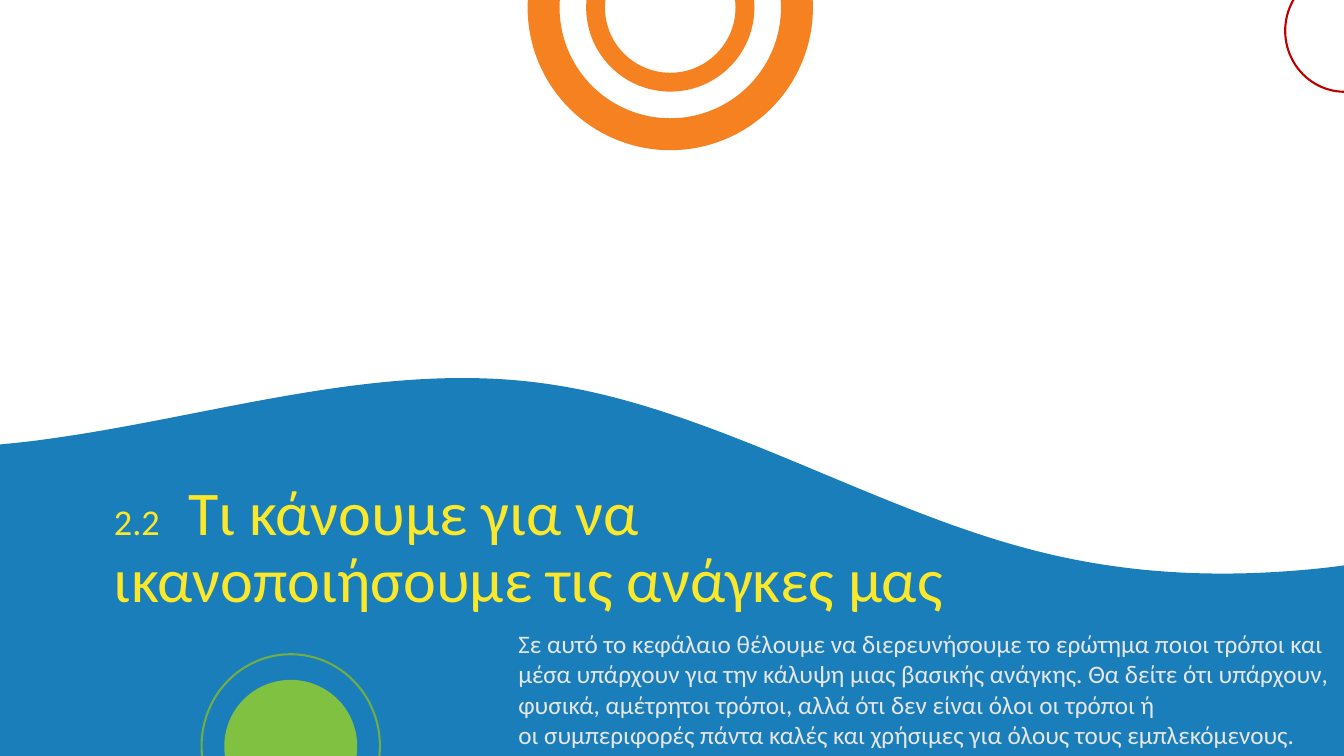
from lxml import etree
from pptx import Presentation
from pptx.dml.color import RGBColor
from pptx.enum.shapes import MSO_SHAPE
from pptx.enum.text import MSO_ANCHOR, PP_ALIGN
from pptx.oxml.ns import qn
from pptx.util import Pt

DONUT, OVAL = MSO_SHAPE.DONUT, MSO_SHAPE.OVAL
TOP, LEFT = MSO_ANCHOR.TOP, PP_ALIGN.LEFT
WIDTH, HEIGHT = 960, 540
TITLE_ONLY = 5
FONT = "Calibri"
COLORS = {
    "wave": "1A7EBA", "title": "FBE82A", "body": "E7E6E6", "ring": "F68121",
    "disc": "80C141", "disc_edge": "70AD47", "corner": "C00000",
}

# Wave outline in page points; a curve has two control points and an end
WAVE_TOP = 270
WAVE_OUTLINE = [
    ("moveTo", [(WIDTH, HEIGHT)]),
    ("lnTo", [(0, HEIGHT)]),
    ("lnTo", [(0, 317.5)]),
    ("lnTo", [(13.7, 316.1)]),
    ("cubicBezTo", [(28.1, 314.6), (41.8, 312.5), (56.2, 310.3)]),
    ("cubicBezTo", [(169.2, 292.3), (283, 257), (396, 275)]),
    ("cubicBezTo", [(509, 292.3), (622.8, 362.9), (735.8, 392.4)]),
    ("cubicBezTo", [(806.4, 411.1), (877, 413.3), (948.2, 405.4)]),
    ("lnTo", [(WIDTH, 403.9)]),
    ("close", []),
]

BODY_TEXT = (
    "Σε αυτό το κεφάλαιο θέλουμε να διερευνήσουμε το ερώτημα ποιοι τρόποι και "
    "μέσα υπάρχουν για την κάλυψη μιας βασικής ανάγκης. Θα δείτε ότι υπάρχουν, "
    "φυσικά, αμέτρητοι τρόποι, αλλά ότι δεν είναι όλοι οι τρόποι ή \n"
    "οι συμπεριφορές πάντα καλές και χρήσιμες για όλους τους εμπλεκόμενους."
)


def color(name):
    return RGBColor.from_string(COLORS[name])


def paint(shape, fill=None, line=None):
    shape.shadow.inherit = False
    if fill:
        shape.fill.solid()
        shape.fill.fore_color.rgb = color(fill)
    else:
        shape.fill.background()
    if line:
        shape.line.color.rgb = color(line)
        shape.line.width = Pt(1.5)
    else:
        shape.line.fill.background()


def add_round(page, kind, center, size, **look):
    (x, y), (width, height) = center, size
    shape = page.shapes.add_shape(
        kind, Pt(x - width / 2), Pt(y - height / 2), Pt(width), Pt(height))
    paint(shape, **look)
    return shape


def add_wave(page):
    # The frame sets place and size; its outline then becomes the wave
    builder = page.shapes.build_freeform(Pt(0), Pt(WAVE_TOP), scale=1.0)
    corners = [(WIDTH, WAVE_TOP), (WIDTH, HEIGHT), (0, HEIGHT)]
    builder.add_line_segments([(Pt(x), Pt(y)) for x, y in corners], close=True)
    wave = builder.convert_to_shape()
    outline = next(wave._element.iter(qn("a:path")))
    for command in list(outline):
        outline.remove(command)
    for name, points in WAVE_OUTLINE:
        command = etree.SubElement(outline, qn("a:" + name))
        for x, y in points:
            etree.SubElement(command, qn("a:pt"), x=str(int(Pt(x))),
                             y=str(int(Pt(y - WAVE_TOP))))
    paint(wave, fill="wave")


def place_text(box, left, top, width, height):
    box.left, box.top, box.width, box.height = Pt(left), Pt(top), Pt(width), Pt(height)
    frame = box.text_frame
    frame.word_wrap = True
    frame.vertical_anchor = TOP
    para = frame.paragraphs[0]
    para.alignment = LEFT
    return para


def write(para, text, size, ink):
    for index, line in enumerate(text.split("\n")):
        if index:
            para.add_line_break()
        span = para.add_run()
        span.text = line
        span.font.name = FONT
        span.font.size = Pt(size)
        span.font.color.rgb = color(ink)


def main():
    deck = Presentation()
    deck.slide_width, deck.slide_height = Pt(WIDTH), Pt(HEIGHT)
    page = deck.slides.add_slide(deck.slide_layouts[TITLE_ONLY])

    # Background wave
    add_wave(page)

    # Title, moved in front of the wave
    title = page.shapes.title
    page.shapes._spTree.append(title._element)
    para = place_text(title, 74.2, 340.6, 635, 118)
    para.line_spacing = 0.9
    write(para, "2.2", 25.9, "title")
    write(para, "  Τι κάνουμε για να ικανοποιήσουμε τις ανάγκες μας", 44.4, "title")

    # Concentric rings at the top
    for diameter in (203.8, 120.2):
        ring = add_round(page, DONUT, (478.8, 5.4), (diameter, diameter), fill="ring")
        ring.adjustments[0] = 0.112

    # Green disc with its outline, and the corner circle
    add_round(page, OVAL, (207.7, 533.1), (95, 95), fill="disc")
    add_round(page, OVAL, (207.7, 532.8), (127.4, 131), line="disc_edge")
    add_round(page, OVAL, (960.5, 22), (85, 87.1), line="corner")

    # Introduction
    box = page.shapes.add_textbox(0, 0, 0, 0)
    write(place_text(box, 363.2, 445.3, 596.8, 94.3), BODY_TEXT, 18, "body")

    deck.save("out.pptx")


if __name__ == "__main__":
    main()
